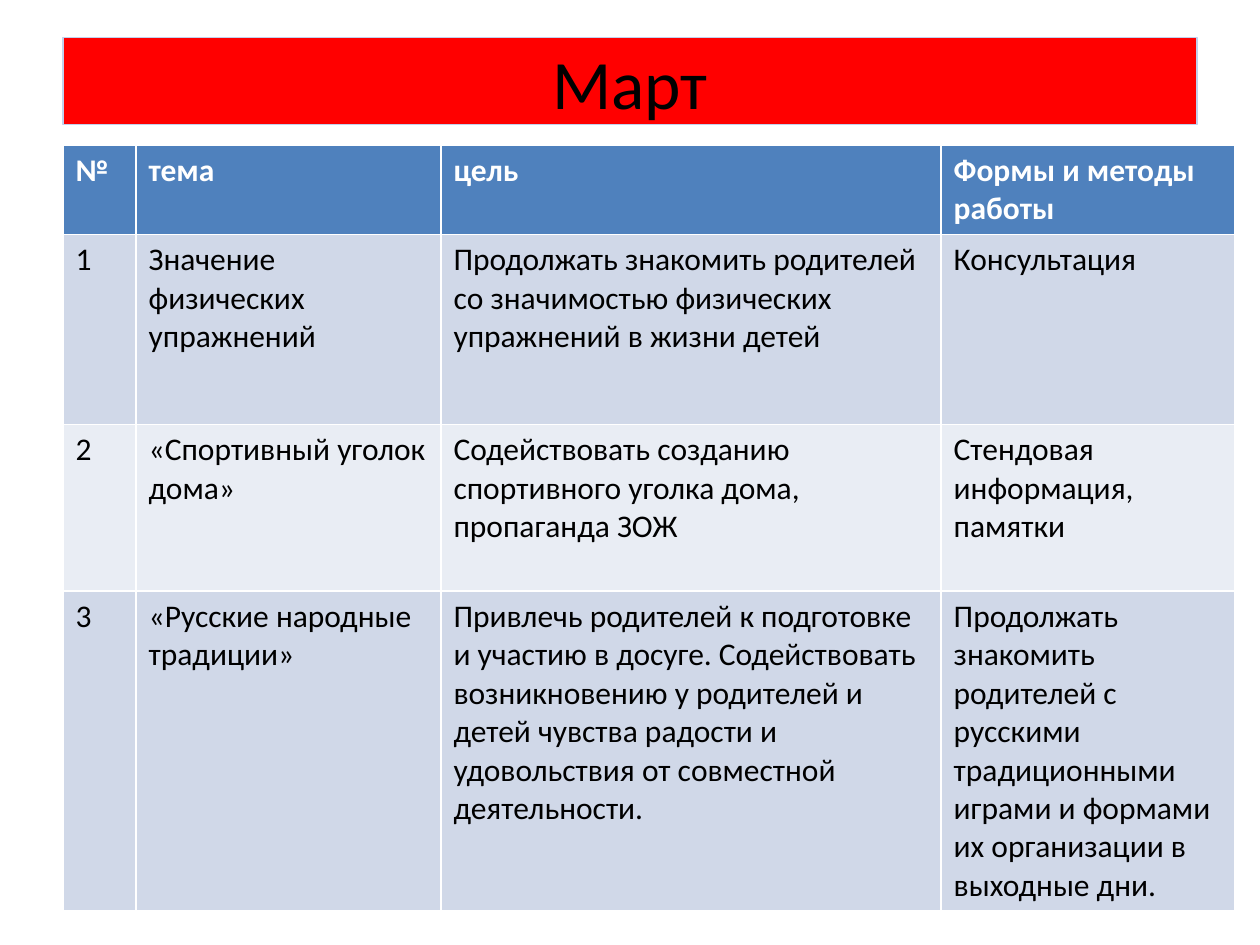
from pptx import Presentation
from pptx.dml.color import RGBColor
from pptx.enum.shapes import MSO_SHAPE as Shape
from pptx.enum.text import MSO_ANCHOR as Anchor, PP_ALIGN as Align
from pptx.util import Inches, Pt

FONT = "Calibri"
BLACK = RGBColor(0x00, 0x00, 0x00)
WHITE = RGBColor(0xFF, 0xFF, 0xFF)
RED = RGBColor(0xFF, 0x00, 0x00)
PALE_BLUE = RGBColor(0xC2, 0xD1, 0xED)
HEADER_BLUE = RGBColor(0x4F, 0x81, 0xBD)
BANDS = [RGBColor(0xD0, 0xD8, 0xE8), RGBColor(0xE9, 0xED, 0xF4)]

COLUMN_WIDTHS = [0.58, 2.42, 3.97, 2.33]
ROW_HEIGHTS = [0.7, 1.51, 1.32, 2.54]
PLAN = [
    ["№", "тема", "цель", "Формы и методы работы"],
    ["1", "Значение физических упражнений",
     "Продолжать знакомить родителей со значимостью физических упражнений в жизни детей",
     "Консультация"],
    ["2", "«Спортивный уголок дома»",
     "Содействовать созданию спортивного уголка дома, пропаганда ЗОЖ",
     "Стендовая информация, памятки"],
    ["3", "«Русские народные традиции»",
     "Привлечь родителей к подготовке и участию в досуге. Содействовать возникновению "
     "у родителей и детей чувства радости и удовольствия от совместной деятельности.",
     "Продолжать знакомить родителей с русскими традиционными играми и формами "
     "их организации в выходные дни."],
]


def add_text(para, text, size, color, bold=False):
    span = para.add_run()
    span.text = text
    span.font.name = FONT
    span.font.size = Pt(size)
    span.font.bold = bold
    span.font.color.rgb = color


def add_title(slide, text):
    box = slide.shapes.add_shape(
        Shape.RECTANGLE, Inches(0.5), Inches(0.3), Inches(9), Inches(0.69))
    box.shadow.inherit = False
    box.fill.solid()
    box.fill.fore_color.rgb = RED
    box.line.color.rgb = PALE_BLUE
    box.line.width = Pt(0.75)
    frame = box.text_frame
    frame.word_wrap = True
    frame.vertical_anchor = Anchor.MIDDLE
    para = frame.paragraphs[0]
    para.alignment = Align.CENTER
    add_text(para, text, 39.6, BLACK)


def add_plan_table(slide, rows):
    table = slide.shapes.add_table(
        len(rows), len(COLUMN_WIDTHS), Inches(0.5), Inches(1.15),
        Inches(sum(COLUMN_WIDTHS)), Inches(sum(ROW_HEIGHTS))).table
    for column, width in zip(table.columns, COLUMN_WIDTHS):
        column.width = Inches(width)
    for row, height in zip(table.rows, ROW_HEIGHTS):
        row.height = Inches(height)
    for index, texts in enumerate(rows):
        is_header = index == 0
        fill = HEADER_BLUE if is_header else BANDS[(index - 1) % 2]
        color = WHITE if is_header else BLACK
        for cell, text in zip(table.rows[index].cells, texts):
            cell.fill.solid()
            cell.fill.fore_color.rgb = fill
            add_text(cell.text_frame.paragraphs[0], text, 18, color, is_header)


def main():
    deck = Presentation()
    deck.slide_width = Inches(10)
    deck.slide_height = Inches(7.5)
    slide = deck.slides.add_slide(deck.slide_layouts[6])
    add_title(slide, "Март")
    add_plan_table(slide, PLAN)
    deck.save("out.pptx")


if __name__ == "__main__":
    main()
